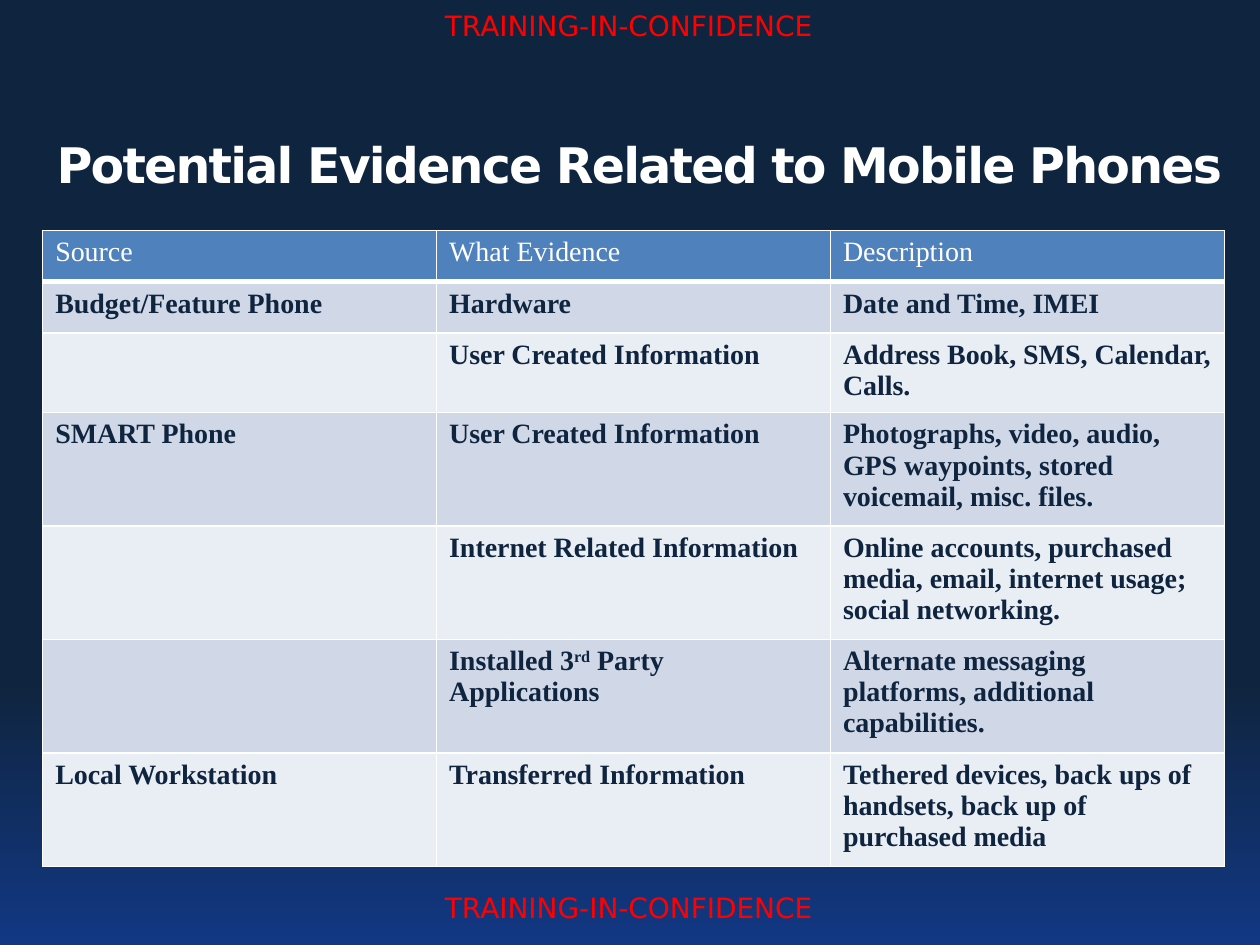
from copy import deepcopy
from dataclasses import dataclass, field

from pptx import Presentation
from pptx.dml.color import RGBColor
from pptx.enum import text as txt
from pptx.oxml import ns, xmlchemy
from pptx.util import Cm, Pt

NAVY = RGBColor(0x0F, 0x24, 0x3E)
BLUE = RGBColor(0x12, 0x38, 0x84)
WHITE = RGBColor(0xFF, 0xFF, 0xFF)
RED = RGBColor(0xFF, 0x00, 0x00)
HEAD = RGBColor(0x4F, 0x81, 0xBD)
BANDS = RGBColor(0xD0, 0xD8, 0xE8), RGBColor(0xE9, 0xED, 0xF4)

SANS = dict(name="DejaVu Sans")
SERIF = dict(name="Times New Roman", size=Pt(16))
MARK = dict(SANS, size=Pt(16), color=RED)
TITLE = dict(SANS, size=Pt(28), bold=True, color=WHITE)
TOP = dict(SERIF, bold=False, color=WHITE)
BODY = dict(SERIF, bold=True, color=NAVY)

# In a tuple, every second piece is raised.
ROWS = [
    ("Source", "What Evidence", "Description"),
    ("Budget/Feature Phone", "Hardware", "Date and Time, IMEI"),
    ("", "User Created Information", "Address Book, SMS, Calendar, Calls."),
    ("SMART Phone", "User Created Information",
     "Photographs, video, audio, GPS waypoints, stored voicemail, misc. files."),
    ("", "Internet Related Information",
     "Online accounts, purchased media, email, internet usage; social networking."),
    ("", ("Installed 3", "rd", " Party Applications"),
     "Alternate messaging platforms, additional capabilities."),
    ("Local Workstation", "Transferred Information",
     "Tethered devices, back ups of handsets, back up of purchased media"),
]
HIGH = [1.03, 1.03, 1.32, 1.03, 1.03, 1.03, 1.03]


@dataclass
class Label:
    text: str
    at: tuple[float, float, float, float]
    font: dict
    align: txt.PP_ALIGN = txt.PP_ALIGN.LEFT
    frame: dict = field(default_factory=dict)
    track: int = 0


MARK_FRAME = dict(word_wrap=False, auto_size=txt.MSO_AUTO_SIZE.SHAPE_TO_FIT_TEXT)
TITLE_FRAME = dict(
    word_wrap=True, vertical_anchor=txt.MSO_ANCHOR.BOTTOM,
    margin_left=0, margin_top=0, margin_right=0, margin_bottom=0,
)
LABELS = [
    Label("TRAINING-IN-CONFIDENCE", (8.46, top, 8.43, high), MARK,
          txt.PP_ALIGN.CENTER, MARK_FRAME)
    for top, high in ((0.05, 1.8), (17.83, 0.94))
] + [
    Label("Potential Evidence Related to Mobile Phones",
          (1.14, 1.45, 23.77, 2.44), TITLE, frame=TITLE_FRAME, track=-100),
]


def style(font, form: dict) -> None:
    for key, value in form.items():
        if key == "color":
            font.color.rgb = value
        else:
            setattr(font, key, value)


def paint(slide) -> None:
    """Fill the background with a downward gradient of three stops."""
    fill = slide.background.fill
    fill.gradient()
    fill.gradient_angle = 270
    first, last = fill.gradient_stops
    first.color.rgb, last.color.rgb = NAVY, BLUE
    first.position, last.position = 0, 1
    stops = slide.element.find(".//" + ns.qn("a:gsLst"))
    mid = deepcopy(stops[0])
    mid.set("pos", "72000")
    stops.insert(1, mid)


def write(slide, label: Label) -> None:
    box = slide.shapes.add_textbox(*map(Cm, label.at))
    for key, value in label.frame.items():
        setattr(box.text_frame, key, value)
    para = box.text_frame.paragraphs[0]
    para.alignment = label.align
    run = para.add_run()
    run.text = label.text
    style(run.font, label.font)
    if label.track:
        run._r.get_or_add_rPr().set("spc", str(label.track))


def edge(cell, base: int) -> None:
    """Draw white borders; base is the width of the lower one in points."""
    props = cell._tc.get_or_add_tcPr()
    for side, wide in dict(L=1, R=1, T=1, B=base).items():
        line = xmlchemy.OxmlElement(f"a:ln{side}")
        line.set("w", str(Pt(wide)))
        solid = xmlchemy.OxmlElement("a:solidFill")
        color = xmlchemy.OxmlElement("a:srgbClr")
        color.set("val", str(WHITE))
        solid.append(color)
        line.append(solid)
        props.append(line)


def fill_cell(cell, words: str | tuple, row: int) -> None:
    edge(cell, 1 if row else 3)
    cell.fill.solid()
    cell.fill.fore_color.rgb = BANDS[(row - 1) % 2] if row else HEAD
    para = cell.text_frame.paragraphs[0]
    form = BODY if row else TOP
    style(para.font, form)
    for i, part in enumerate((words,) if isinstance(words, str) else words):
        if part:
            run = para.add_run()
            run.text = part
            style(run.font, form)
            if i % 2:
                run._r.get_or_add_rPr().set("baseline", "30000")


def add_grid(slide) -> None:
    grid = slide.shapes.add_table(
        len(ROWS), 3, Cm(0.86), Cm(4.65), Cm(23.83), Cm(sum(HIGH))).table
    for col in grid.columns:
        col.width = Cm(7.94)
    for r, (words, high) in enumerate(zip(ROWS, HIGH)):
        grid.rows[r].height = Cm(high)
        for c, word in enumerate(words):
            fill_cell(grid.cell(r, c), word, r)


def main() -> None:
    deck = Presentation()
    deck.slide_width, deck.slide_height = Cm(25.4), Cm(19.05)
    slide = deck.slides.add_slide(deck.slide_layouts[6])
    paint(slide)
    for label in LABELS:
        write(slide, label)
    add_grid(slide)
    deck.save("out.pptx")


if __name__ == "__main__":
    main()
